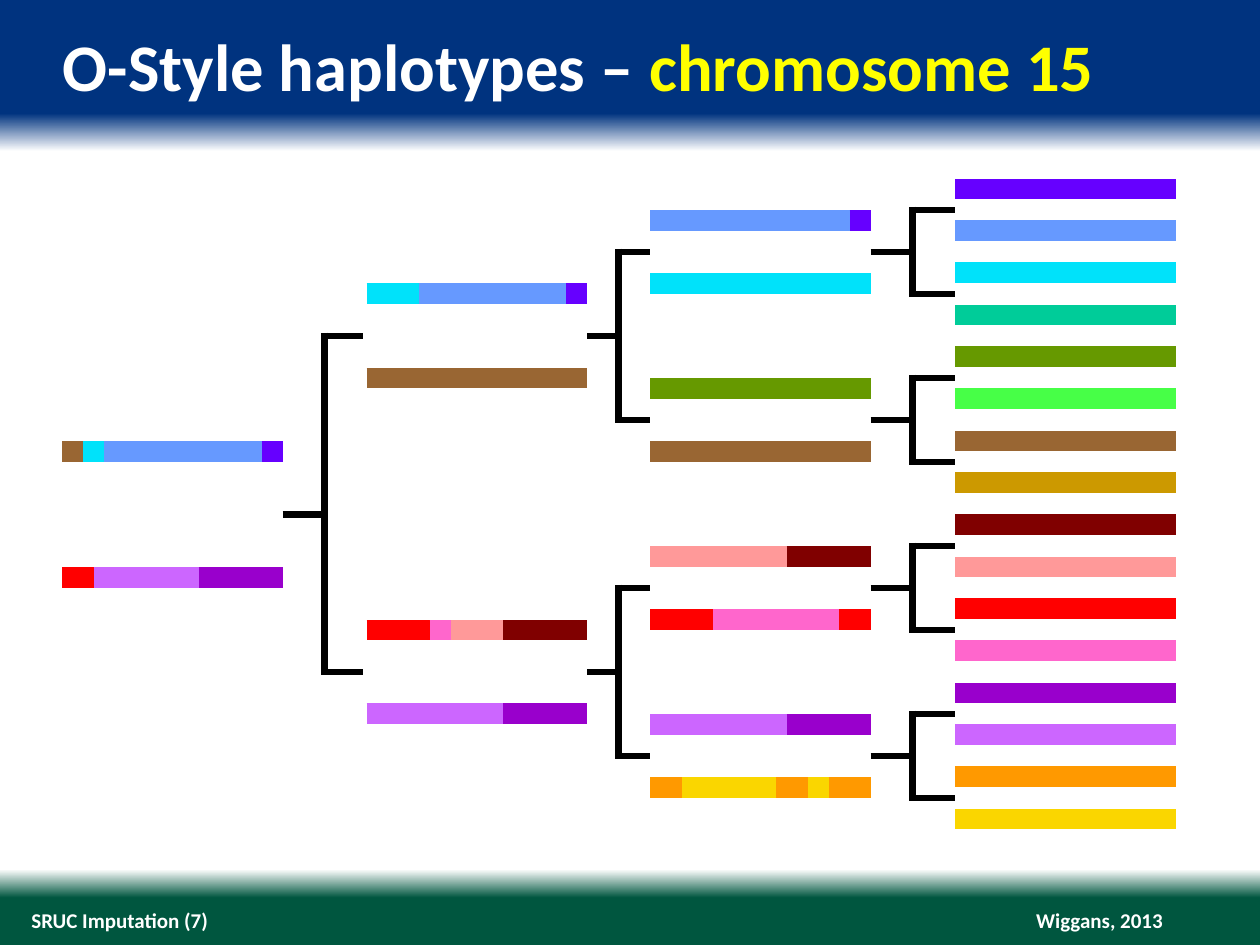
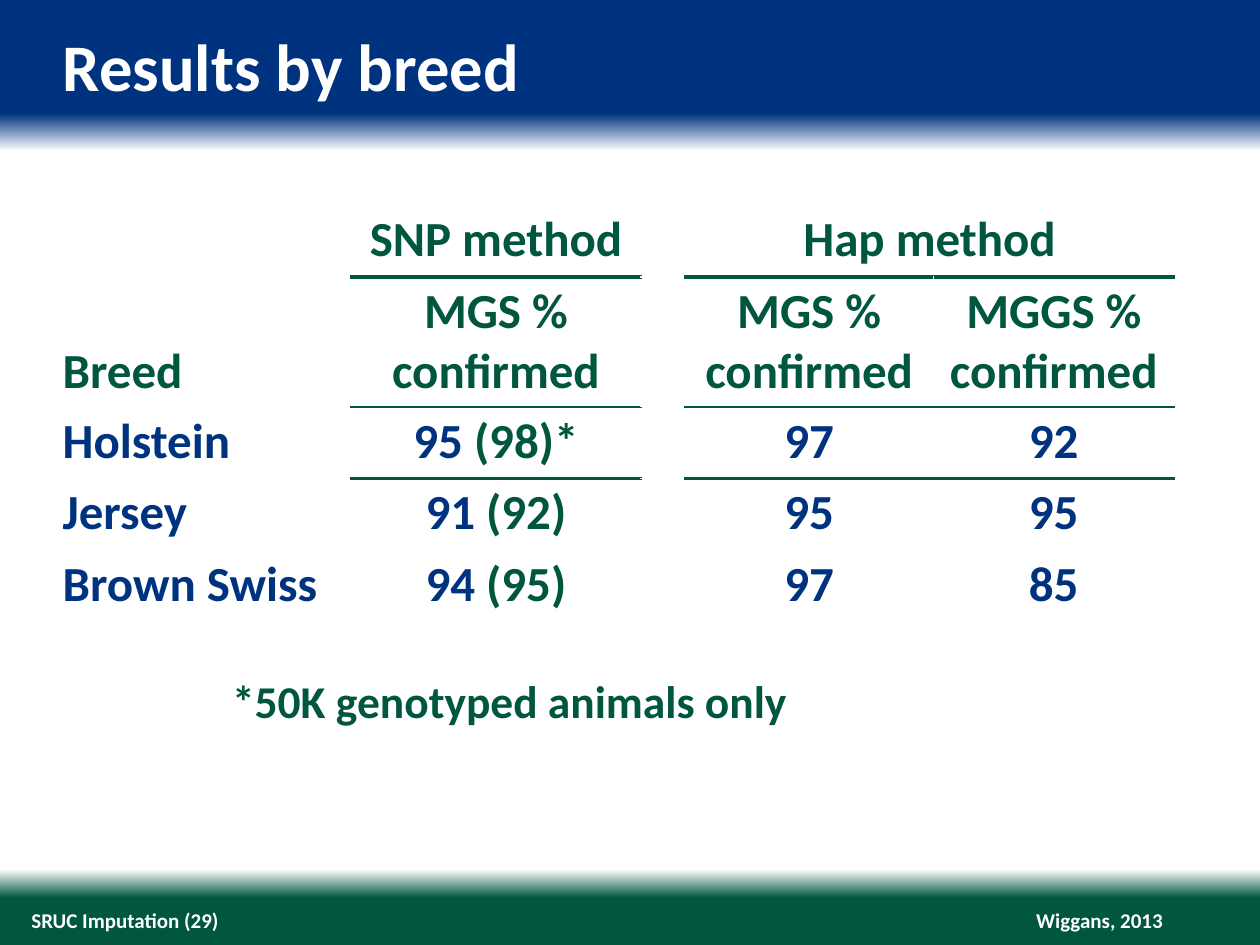
import pptx
import pptx.dml.color
import pptx.enum.shapes
import pptx.enum.text
import pptx.oxml
import pptx.oxml.ns
import pptx.util
import lxml.etree

Pt = pptx.util.Pt
RGB = pptx.dml.color.RGBColor.from_string
ALIGN = pptx.enum.text.PP_ALIGN
ANCHOR = pptx.enum.text.MSO_ANCHOR
qn = pptx.oxml.ns.qn


class Theme:
    font = "Calibri"
    navy, green, white, yellow, black = "00337F", "00563F", "FFFFFF", "FFFF00", "000000"
    title_size, table_size, note_size, footer_size = 38, 28, 26, 12
    background = [(0, navy), (12, navy), (16, white), (92, white), (95, green), (100, green)]
    bar_weight, bracket_weight = 12, 3.75
    haplotypes = {
        "violet": "6600FF", "blue": "6699FF", "cyan": "00E2FA", "teal": "00CC99",
        "olive": "669900", "lime": "47FF47", "brown": "996633", "ochre": "CC9900",
        "maroon": "800000", "salmon": "FF9999", "red": "FF0000", "pink": "FF66CC",
        "purple": "9900CC", "lilac": "CC66FF", "orange": "FF9900", "gold": "FAD600",
    }


def write_spans(para, spans, size, align=ALIGN.LEFT):
    base_color = spans[0][1]
    para.alignment = align
    para.font.name = Theme.font
    para.font.size = Pt(size)
    para.font.bold = True
    para.font.color.rgb = RGB(base_color)
    for text, color in spans:
        span = para.add_run()
        span.text = text
        if color != base_color:
            span.font.color.rgb = RGB(color)


def draw_line(page, start, end, color, weight):
    line = page.shapes.add_connector(
        pptx.enum.shapes.MSO_CONNECTOR.STRAIGHT, *map(Pt, start + end))
    line.line.color.rgb = RGB(color)
    line.line.width = Pt(weight)
    lxml.etree.SubElement(line._element.spPr, qn("a:effectLst"))


deck = pptx.Presentation()
deck.slide_width, deck.slide_height = Pt(720), Pt(540)

slide_texts = [
    (7, [("O-Style haplotypes – ", Theme.white), ("chromosome 15", Theme.yellow)]),
    (29, [("Results by breed", Theme.white)]),
]
pages = []
for number, title in slide_texts:
    page = deck.slides.add_slide(deck.slide_layouts[6])
    pages.append(page)

    fill = page.background.fill
    fill.gradient()
    fill.gradient_angle = 270
    stops = page._element.find(".//" + qn("a:gsLst"))
    for stop in list(stops):
        stops.remove(stop)
    for percent, color in Theme.background:
        stop = lxml.etree.SubElement(stops, qn("a:gs"), pos=str(percent * 1000))
        lxml.etree.SubElement(stop, qn("a:srgbClr"), val=color)

    footer = [(f"SRUC Imputation ({number})", Theme.white)]
    author = [("Wiggans, 2013", Theme.white)]
    for frame, spans, size, align, anchor in [
        ((564.5, 518.5, 100, 14.5), author, Theme.footer_size, ALIGN.RIGHT, ANCHOR.MIDDLE),
        ((18, 518.5, 376, 14.5), footer, Theme.footer_size, ALIGN.LEFT, ANCHOR.MIDDLE),
        ((36, 14.4, 648, 46), title, Theme.title_size, ALIGN.LEFT, ANCHOR.TOP),
    ]:
        box = page.shapes.add_textbox(*map(Pt, frame)).text_frame
        box.word_wrap = True
        box.vertical_anchor = anchor
        box.margin_left = box.margin_right = box.margin_top = box.margin_bottom = 0
        write_spans(box.paragraphs[0], spans, size, align)

pedigree, results = pages

bar_length = 126
leaf_top, leaf_pitch = 108, 24
animal_left, parent_left, grandparent_left, ancestor_left = 35.5, 209.5, 371.5, 545.75
bars = [
    (animal_left, 258, [("brown", 12), ("cyan", 12), ("blue", 90), ("violet", 12)]),
    (animal_left, 330, [("red", 18), ("lilac", 60), ("purple", 48)]),
    (parent_left, 168, [("cyan", 30), ("blue", 84), ("violet", 12)]),
    (parent_left, 216, [("brown", bar_length)]),
    (parent_left, 360, [("red", 36), ("pink", 12), ("salmon", 30), ("maroon", 48)]),
    (parent_left, 408, [("lilac", 78), ("purple", 48)]),
    (grandparent_left, 126, [("blue", 114), ("violet", 12)]),
    (grandparent_left, 162, [("cyan", bar_length)]),
    (grandparent_left, 222, [("olive", bar_length)]),
    (grandparent_left, 258, [("brown", bar_length)]),
    (grandparent_left, 318, [("salmon", 78), ("maroon", 48)]),
    (grandparent_left, 354, [("red", 36), ("pink", 72), ("red", 18)]),
    (grandparent_left, 414, [("lilac", 78), ("purple", 48)]),
    (grandparent_left, 450,
     [("orange", 18), ("gold", 54), ("orange", 18), ("gold", 12), ("orange", 24)]),
]
for row, name in enumerate(Theme.haplotypes):
    bars.append((ancestor_left, leaf_top + row * leaf_pitch, [(name, bar_length)]))

for left, y, segments in bars:
    for name, length in segments:
        draw_line(pedigree, (left, y), (left + length, y),
                  Theme.haplotypes[name], Theme.bar_weight)
        left += length

brackets = [
    (161.5, 185.5, 207.5, 96, 6, [288]),
    (335.5, 353.5, 371.5, 48, 0, [192, 384]),
    (497.5, 521.5, 545.5, 24, 0, [144, 240, 336, 432]),
]
corner = Theme.bracket_weight / 2
for stem, spine, tip, reach, stem_drop, centers in brackets:
    for center in centers:
        top, bottom, stem_y = center - reach, center + reach, center + stem_drop
        for start, end in [
            ((stem, stem_y), (spine, stem_y)),
            ((spine, top - corner), (spine, bottom + corner)),
            ((spine, top), (tip, top)),
            ((spine, bottom), (tip, bottom)),
        ]:
            draw_line(pedigree, start, end, Theme.black, Theme.bracket_weight)

note = results.shapes.add_textbox(Pt(125.5), Pt(381), Pt(336), Pt(39)).text_frame
note.word_wrap = False
write_spans(note.paragraphs[0], [("*50K genotyped animals only", Theme.green)], Theme.note_size)

breed_rows = [
    [[""], ["SNP method"], [""], ["Hap method"], [""]],
    [["Breed"], ["MGS %\nconfirmed"], [""], ["MGS %\nconfirmed"], ["MGGS %\nconfirmed"]],
    [["Holstein"], ["95", " (98)*"], [""], ["97"], ["92"]],
    [["Jersey"], ["91", " (92)"], [""], ["95"], ["95"]],
    [["Brown Swiss"], ["94", " (95)"], [""], ["97"], ["85"]],
]
column_widths = [172, 165.6, 25.2, 142, 137.6]
row_heights = [41, 74, 41, 41, 41]
rule_weights = {0: 2.25, 1: 1.5}
ruled_columns = (1, 3, 4)

grid = results.shapes.add_table(
    len(row_heights), len(column_widths), Pt(28.6), Pt(117.4),
    Pt(sum(column_widths)), Pt(sum(row_heights))).table
grid.first_row = grid.horz_banding = False
for column, width in zip(grid.columns, column_widths):
    column.width = Pt(width)
for row, height in zip(grid.rows, row_heights):
    row.height = Pt(height)
grid.cell(0, 3).merge(grid.cell(0, 4))

for row, entries in enumerate(breed_rows):
    for column, parts in enumerate(entries):
        cell = grid.cell(row, column)
        cell.margin_top = cell.margin_bottom = Pt(2.8)
        cell.vertical_anchor = ANCHOR.BOTTOM if row == 1 else ANCHOR.TOP
        if column in ruled_columns:
            properties = cell._tc.get_or_add_tcPr()
            for side, rule in (("a:lnT", row - 1), ("a:lnB", row)):
                if rule in rule_weights:
                    border = lxml.etree.SubElement(
                        properties, qn(side), w=str(Pt(rule_weights[rule])))
                    paint = lxml.etree.SubElement(border, qn("a:solidFill"))
                    lxml.etree.SubElement(paint, qn("a:srgbClr"), val=Theme.green)
        cell.fill.background()
        if not parts[0]:
            continue
        color = Theme.green if row < 2 else Theme.navy
        align = ALIGN.CENTER if column else ALIGN.LEFT
        for index, text in enumerate(parts[0].split("\n")):
            para = cell.text_frame.add_paragraph() if index else cell.text_frame.paragraphs[0]
            spans = [(text, color)] + [(extra, Theme.green) for extra in parts[1:]]
            write_spans(para, spans, Theme.table_size, align)

deck.save("out.pptx")
